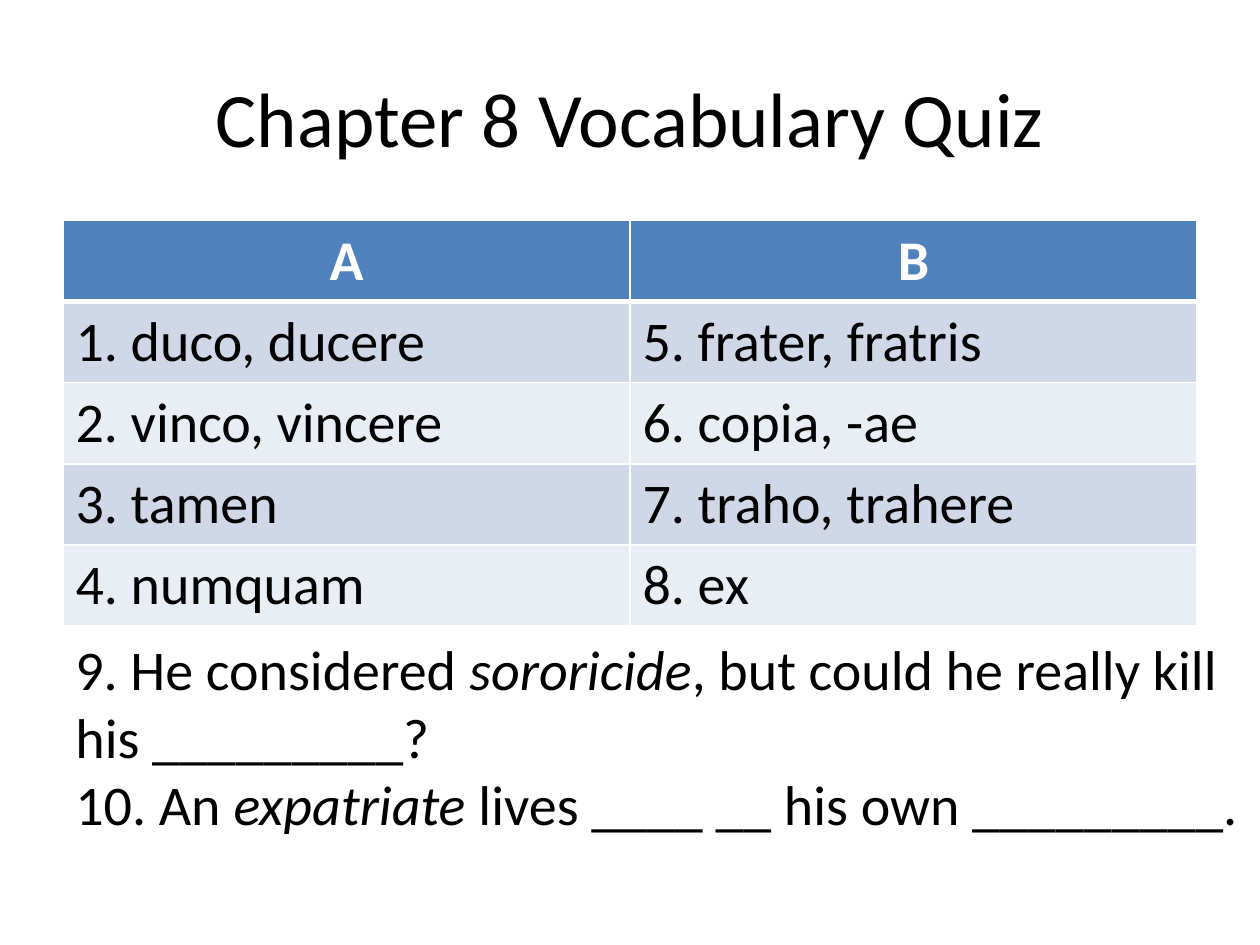
from lxml import etree
from pptx import Presentation
from pptx.dml.color import RGBColor
from pptx.enum.text import MSO_ANCHOR, MSO_AUTO_SIZE, PP_ALIGN
from pptx.oxml.ns import qn
from pptx.util import Inches, Pt

BLACK = RGBColor(0x00, 0x00, 0x00)
WHITE = RGBColor(0xFF, 0xFF, 0xFF)
HEADER_BLUE = RGBColor(0x4F, 0x81, 0xBD)
BANDS = (RGBColor(0xD0, 0xD8, 0xE8), RGBColor(0xE9, 0xED, 0xF4))

COLUMN = Inches(0.5)
ROW = Inches(0.05)
TITLE_ONLY = 5

VOCABULARY = [
    ("A", "B"),
    ("1. duco, ducere", "5. frater, fratris"),
    ("2. vinco, vincere", "6. copia, -ae"),
    ("3. tamen", "7. traho, trahere"),
    ("4. numquam", "8. ex"),
]
# Every second piece of a sentence is italic.
SENTENCES = [
    ("9. He considered ", "sororicide", ", but could he really kill his _________?"),
    ("10. An ", "expatriate", " lives ____ __ his own _________."),
]


class QuizSlide:
    """Holds the slide and its style; lengths are grid columns and rows."""

    font_name = "Calibri"
    title_size = Pt(44)
    body_size = Pt(32)

    def __init__(self, presentation):
        self.slide = presentation.slides.add_slide(
            presentation.slide_layouts[TITLE_ONLY])

    def grid(self, left, top, width, height):
        return (int(left * COLUMN), int(top * ROW),
                int(width * COLUMN), int(height * ROW))

    def style(self, paragraph, size, color=BLACK, bold=False, align=PP_ALIGN.LEFT):
        paragraph.alignment = align
        font = paragraph.font
        font.name, font.size, font.bold = self.font_name, size, bold
        font.color.rgb = color

    def title(self, text, *place):
        shape = self.slide.shapes.title
        shape.left, shape.top, shape.width, shape.height = self.grid(*place)
        frame = shape.text_frame
        frame.text = text
        frame.vertical_anchor = MSO_ANCHOR.MIDDLE
        self.style(frame.paragraphs[0], self.title_size, align=PP_ALIGN.CENTER)

    def borders(self, cell, widths):
        """Draws white borders, given as points for left, right, top, bottom."""
        properties = cell._tc.get_or_add_tcPr()
        for side, width in zip("LRTB", widths):
            line = etree.SubElement(properties, qn(f"a:ln{side}"), w=str(Pt(width)))
            fill = etree.SubElement(line, qn("a:solidFill"))
            etree.SubElement(fill, qn("a:srgbClr"), val=str(WHITE))

    def table(self, rows, *place):
        table = self.slide.shapes.add_table(
            len(rows), len(rows[0]), *self.grid(*place)).table
        for row, texts in enumerate(rows):
            header = row == 0
            for column, text in enumerate(texts):
                cell = table.cell(row, column)
                cell.text = text
                top, bottom = (3 if row == 1 else 1), (3 if header else 1)
                self.borders(cell, (1, 1, top, bottom))
                cell.fill.solid()
                cell.fill.fore_color.rgb = (
                    HEADER_BLUE if header else BANDS[(row - 1) % 2])
                self.style(cell.text_frame.paragraphs[0], self.body_size,
                           WHITE if header else BLACK, header,
                           PP_ALIGN.CENTER if header else PP_ALIGN.LEFT)

    def sentences(self, sentences, *place):
        frame = self.slide.shapes.add_textbox(*self.grid(*place)).text_frame
        frame.word_wrap = True
        frame.auto_size = MSO_AUTO_SIZE.SHAPE_TO_FIT_TEXT
        for index, pieces in enumerate(sentences):
            paragraph = frame.add_paragraph() if index else frame.paragraphs[0]
            self.style(paragraph, self.body_size)
            for position, piece in enumerate(pieces):
                run = paragraph.add_run()
                run.text = piece
                run.font.italic = position % 2 == 1


def main():
    presentation = Presentation()
    presentation.slide_width = Inches(10)
    presentation.slide_height = Inches(7.5)
    quiz = QuizSlide(presentation)
    quiz.title("Chapter 8 Vocabulary Quiz", 1, 6, 18, 25)
    quiz.table(VOCABULARY, 1, 35, 18, 64)
    quiz.sentences(SENTENCES, 1, 99.8, 19, 34.4)
    presentation.save("out.pptx")


if __name__ == "__main__":
    main()
